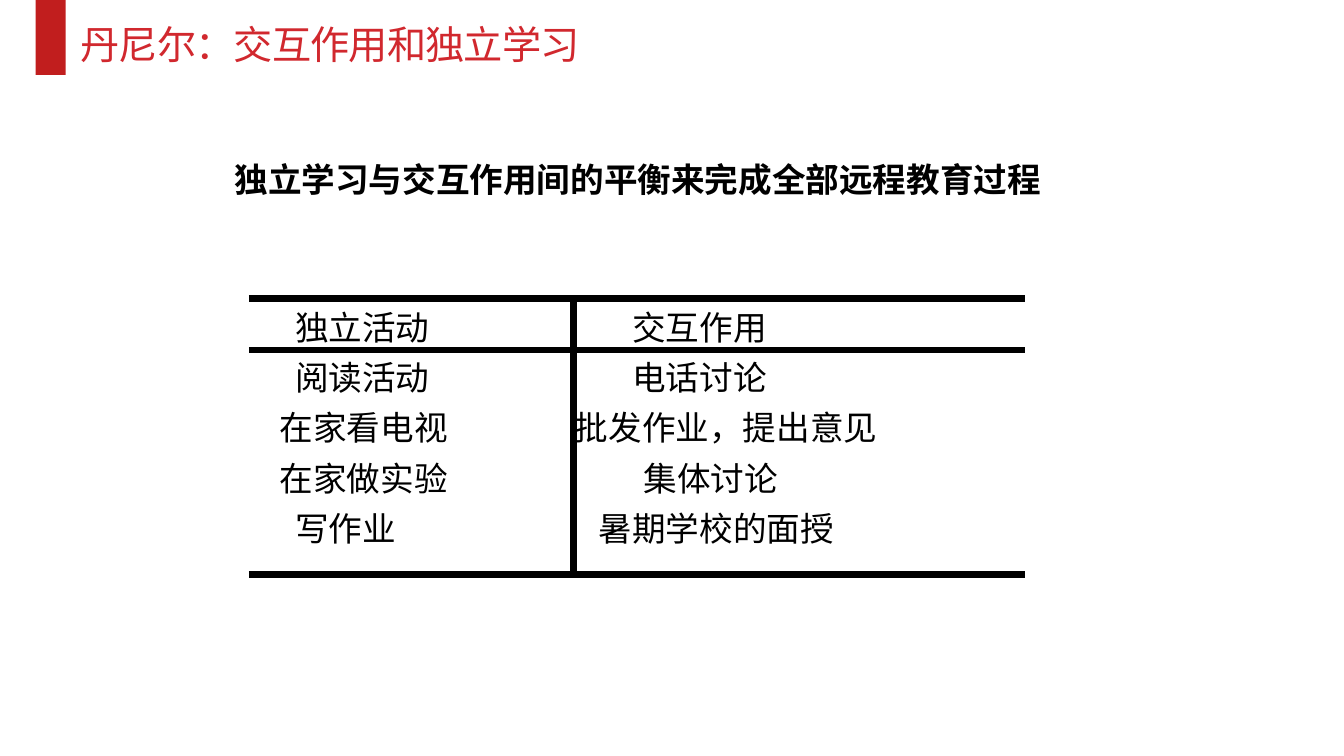
from dataclasses import dataclass

from lxml.etree import SubElement
from pptx import Presentation
from pptx.dml.color import RGBColor
from pptx.enum.shapes import MSO_CONNECTOR as Connector, MSO_SHAPE as Preset
from pptx.enum.text import MSO_ANCHOR as Anchor, MSO_AUTO_SIZE as AutoSize, PP_ALIGN as Align
from pptx.oxml.ns import qn
from pptx.util import Pt

FONT = "Noto Sans CJK SC"
BLACK, RED, BAR_RED = "000000", "D1282E", "C11E1E"
TABLE_LEFT, TABLE_RIGHT, DIVIDER = 177.84, 732.24, 409.68
TABLE_TOP, HEADER_BOTTOM, TABLE_BOTTOM = 213.12, 249.84, 410.4
TEXT_TOP, TEXT_HEIGHT = 222.3, 186


@dataclass
class Entry:
    text: str
    indent: float


@dataclass
class Column:
    left: float
    width: float
    entries: list[Entry]


@dataclass
class Rule:
    start: tuple[float, float]
    end: tuple[float, float]


COLUMNS = [
    Column(TABLE_LEFT, DIVIDER - TABLE_LEFT, [
        Entry("独立活动", 33), Entry("阅读活动", 33), Entry("在家看电视", 22),
        Entry("在家做实验", 22), Entry("写作业", 33)]),
    Column(DIVIDER, TABLE_RIGHT - DIVIDER, [
        Entry("交互作用", 42), Entry("电话讨论", 42), Entry("批发作业，提出意见", 1),
        Entry("集体讨论", 50), Entry("暑期学校的面授", 18)]),
]
RULES = [Rule((TABLE_LEFT, y), (TABLE_RIGHT, y))
         for y in (TABLE_TOP, HEADER_BOTTOM, TABLE_BOTTOM)]
RULES.append(Rule((DIVIDER, TABLE_TOP), (DIVIDER, TABLE_BOTTOM)))


def color(value: str) -> RGBColor:
    return RGBColor.from_string(value)


def place(shape, left: float, top: float, width: float, height: float) -> None:
    shape.left, shape.top = Pt(left), Pt(top)
    shape.width, shape.height = Pt(width), Pt(height)


def style_frame(frame, anchor: Anchor) -> None:
    frame.word_wrap = True
    frame.auto_size = AutoSize.NONE
    frame.vertical_anchor = anchor


def style_paragraph(paragraph, size: float, text_color: str, bold: bool = False):
    paragraph.alignment = Align.LEFT
    font = paragraph.font
    font.size, font.bold, font.name = Pt(size), bold, FONT
    font.color.rgb = color(text_color)
    properties = paragraph._p.get_or_add_pPr().find(qn("a:defRPr"))
    SubElement(properties, qn("a:ea")).set("typeface", FONT)
    return properties


def fill_column(placeholder, column: Column) -> None:
    place(placeholder, column.left, TEXT_TOP, column.width, TEXT_HEIGHT)
    frame = placeholder.text_frame
    style_frame(frame, Anchor.TOP)
    frame.margin_left = frame.margin_right = frame.margin_top = frame.margin_bottom = 0
    frame.text = "\n".join(entry.text for entry in column.entries)
    for paragraph, entry in zip(frame.paragraphs, column.entries):
        paragraph.line_spacing = 0.9
        paragraph.space_before, paragraph.space_after = Pt(0), Pt(10)
        properties = paragraph._p.get_or_add_pPr()
        properties.set("marL", str(Pt(entry.indent)))
        properties.set("indent", "0")
        SubElement(properties, qn("a:buNone"))
        style_paragraph(paragraph, 24, BLACK)


def draw_rule(slide, rule: Rule) -> None:
    line = slide.shapes.add_connector(
        Connector.STRAIGHT, *map(Pt, rule.start), *map(Pt, rule.end))
    line.line.color.rgb = color(BLACK)
    line.line.width = Pt(4.5)
    SubElement(line._element.spPr, qn("a:effectLst"))


def main() -> None:
    presentation = Presentation()
    presentation.slide_width, presentation.slide_height = Pt(960), Pt(540)
    slide = presentation.slides.add_slide(presentation.slide_layouts[3])
    title, *bodies = slide.placeholders

    # Title with its red bar
    bar = slide.shapes.add_shape(Preset.RECTANGLE, Pt(25.5), Pt(0), Pt(21.5), Pt(53.5))
    bar.shadow.inherit = False
    bar.fill.solid()
    bar.fill.fore_color.rgb = color(BAR_RED)
    bar.line.fill.background()
    place(title, 50.4, 10.8, 374.4, 41)
    style_frame(title.text_frame, Anchor.MIDDLE)
    title.text_frame.text = "丹尼尔：交互作用和独立学习"
    style_paragraph(title.text_frame.paragraphs[0], 28, RED).set("spc", "-60")

    # Statement
    statement = slide.shapes.add_textbox(Pt(160.5), Pt(110), Pt(596), Pt(36))
    style_frame(statement.text_frame, Anchor.MIDDLE)
    statement.text_frame.text = "独立学习与交互作用间的平衡来完成全部远程教育过程"
    style_paragraph(statement.text_frame.paragraphs[0], 24, BLACK, bold=True)

    # Two columns of activities and their rules
    for body, column in zip(bodies, COLUMNS):
        fill_column(body, column)
    for rule in RULES:
        draw_rule(slide, rule)

    presentation.save("out.pptx")


if __name__ == "__main__":
    main()
